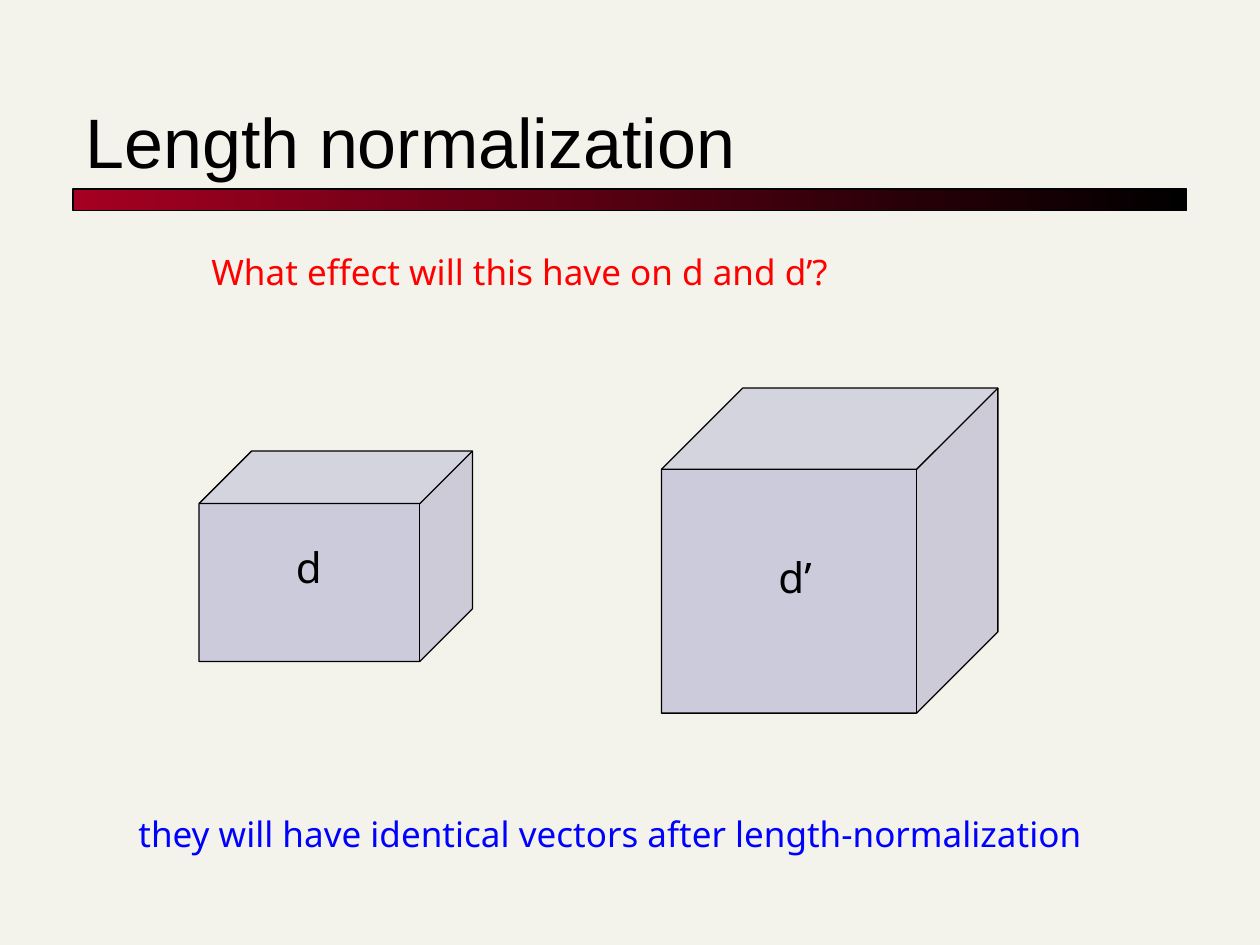
from lxml.etree import SubElement
from pptx import Presentation
from pptx.dml.color import RGBColor
from pptx.enum.shapes import MSO_SHAPE as Shape
from pptx.enum.text import MSO_ANCHOR as Anchor, MSO_AUTO_SIZE as AutoSize, PP_ALIGN as Align
from pptx.oxml.ns import qn
from pptx.util import Inches, Pt

PAPER = RGBColor(0xF4, 0xF3, 0xEB)
CRIMSON = RGBColor(0xA5, 0x00, 0x21)
BLACK = RGBColor(0, 0, 0)
NAVY = RGBColor(0, 0, 0x90)
RED = RGBColor(0xFF, 0, 0)
BLUE = RGBColor(0, 0, 0xFF)
CUBE_OPACITY = 16  # percent

# Boxes are left, top, width, height in inches
TITLE = "Length normalization"
TITLE_BOX = (0.58, 0.42, 8.83, 1.08)
RULE_BOX = (0.58, 1.5, 8.84, 0.17)
CUBES = [(1.58, 3.58, 2.17, 1.67), (5.25, 3.08, 2.67, 2.58)]
# text, box, size, colour, wraps
TEXTS = [
    ("d", (2.25, 4.25, 0.41, 0.5), 24, BLACK, False),
    ("d’", (6.08, 4.33, 0.52, 0.5), 24, BLACK, False),
    ("What effect will this have on d and d’?", (1.58, 1.94, 5.36, 0.44), 20, RED, False),
    ("they will have identical vectors after length-normalization",
     (1, 6.4, 8.42, 0.44), 20, BLUE, True),
]


def inches(box):
    return [Inches(value) for value in box]


def write(frame, text, font, size, color):
    frame.text = text
    para = frame.paragraphs[0]
    para.alignment = Align.LEFT
    span = para.runs[0]
    span.font.name = font
    span.font.size = Pt(size)
    span.font.color.rgb = color


def add_outlined(slide, kind, box):
    shape = slide.shapes.add_shape(kind, *inches(box))
    shape.shadow.inherit = False
    shape.line.color.rgb = BLACK
    shape.line.width = Pt(0.75)
    return shape


def add_rule(slide):
    fill = add_outlined(slide, Shape.RECTANGLE, RULE_BOX).fill
    fill.gradient()
    fill.gradient_angle = 0
    for stop, color, position in zip(fill.gradient_stops, (CRIMSON, BLACK), (0, 1)):
        stop.color.rgb = color
        stop.position = position


def add_cube(slide, box):
    cube = add_outlined(slide, Shape.CUBE, box)
    cube.fill.solid()
    cube.fill.fore_color.rgb = NAVY
    color = cube.element.spPr.find(qn("a:solidFill")).find(qn("a:srgbClr"))
    SubElement(color, qn("a:alpha"), val=str(CUBE_OPACITY * 1000))


def add_title(slide):
    title = slide.shapes.title
    title.left, title.top, title.width, title.height = inches(TITLE_BOX)
    title.text_frame.vertical_anchor = Anchor.BOTTOM
    write(title.text_frame, TITLE, "Arial", 40, BLACK)


def add_text(slide, text, box, size, color, wraps):
    frame = slide.shapes.add_textbox(*inches(box)).text_frame
    frame.word_wrap = wraps
    frame.auto_size = AutoSize.SHAPE_TO_FIT_TEXT
    write(frame, text, "Noto Sans", size, color)


def main():
    deck = Presentation()
    deck.slide_width, deck.slide_height = Inches(10), Inches(7.5)
    slide = deck.slides.add_slide(deck.slide_layouts.get_by_name("Title Only"))
    slide.background.fill.solid()
    slide.background.fill.fore_color.rgb = PAPER
    add_rule(slide)
    add_title(slide)
    for box in CUBES:
        add_cube(slide, box)
    for item in TEXTS:
        add_text(slide, *item)
    deck.save("out.pptx")


if __name__ == "__main__":
    main()
